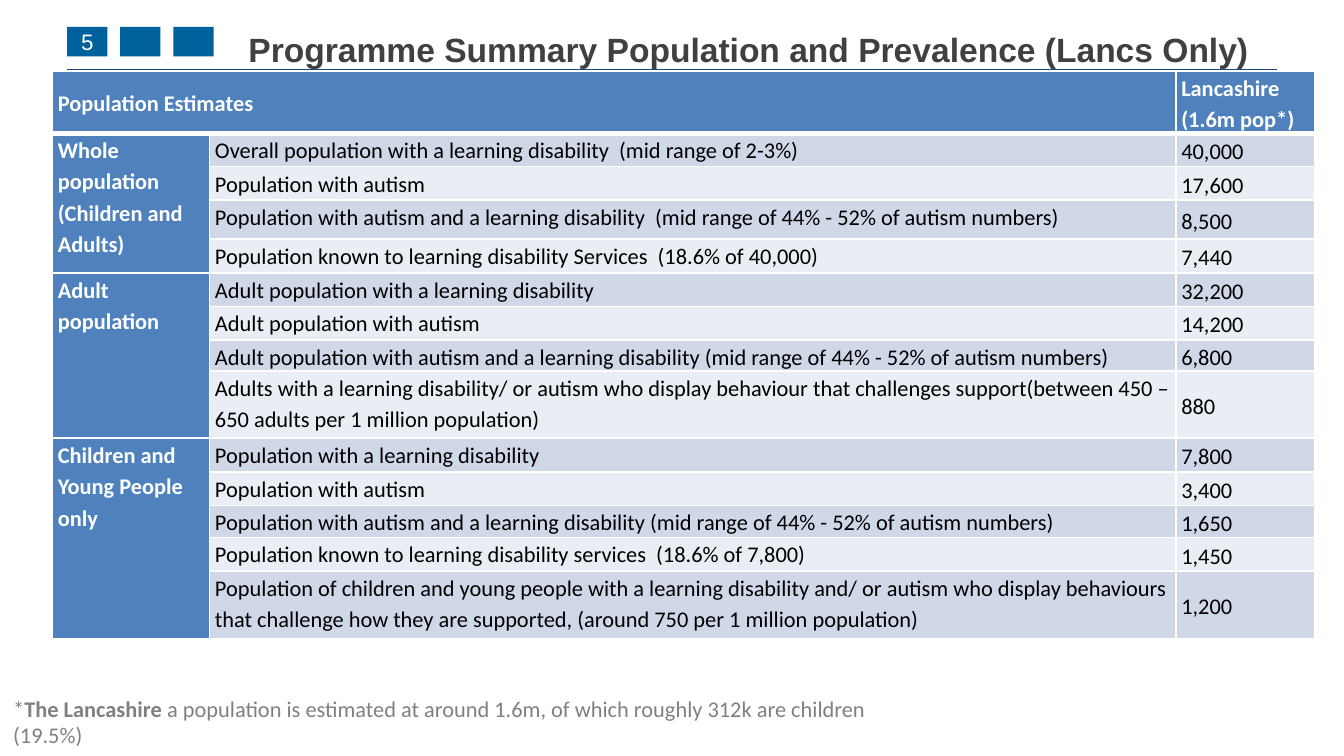
"""Build the population and prevalence summary slide."""
from dataclasses import dataclass

from lxml import etree
from pptx import Presentation
from pptx import util as u
from pptx.dml.color import RGBColor
from pptx.enum import shapes, text
from pptx.oxml import ns

UNIT = 0.1
COLS, ROWS = 100, 56.25
HUES = {
    "block": "00619D", "rule": "1F497D", "title": "404040", "note": "808080",
    "head": "4F81BD", "odd": "D0D8E8", "even": "E9EDF4",
    "white": "FFFFFF", "black": "000000",
}
WIDTHS = (11.7, 71.9, 10.3)
HEAD = 2.8
MIX = "(mid range of 44% - 52% of autism numbers)"


@dataclass
class Line:
    label: str
    count: str
    tall: float = 2.5


@dataclass
class Group:
    name: str
    lines: list[Line]


GROUPS = [
    Group("Whole population\n(Children and Adults)", [
        Line("Overall population with a learning disability  (mid range of 2-3%)", "40,000"),
        Line("Population with autism", "17,600"),
        Line(f"Population with autism and a learning disability  {MIX}", "8,500", 2.9),
        Line("Population known to learning disability Services  (18.6% of 40,000)", "7,440"),
    ]),
    Group("Adult population", [
        Line("Adult population with a learning disability", "32,200"),
        Line("Adult population with autism", "14,200"),
        Line(f"Adult population with autism and a learning disability {MIX}", "6,800", 1.5),
        Line("Adults with a learning disability/ or autism who display behaviour that "
             "challenges support(between 450 – 650 adults per 1 million population)", "880", 5),
    ]),
    Group("Children and Young People only", [
        Line("Population with a learning disability", "7,800"),
        Line("Population with autism", "3,400"),
        Line(f"Population with autism and a learning disability {MIX}", "1,650", 2.4),
        Line("Population known to learning disability services  (18.6% of 7,800)", "1,450"),
        Line("Population of children and young people with a learning disability and/ or "
             "autism who display behaviours that challenge how they are supported, "
             "(around 750 per 1 million population)", "1,200", 5),
    ]),
]


def grid(*spans: float) -> list[int]:
    return [u.Inches(span * UNIT) for span in spans]


def tint(name: str) -> RGBColor:
    return RGBColor.from_string(HUES[name])


def style(run, size: float, face: str, hue: str, bold: bool = False) -> None:
    font = run.font
    font.size, font.name, font.bold = u.Pt(size), face, bold
    font.color.rgb = tint(hue)


def add_block(slide, left: float, label: str = "") -> None:
    box = slide.shapes.add_shape(shapes.MSO_SHAPE.RECTANGLE, *grid(left, 2, 3, 2.2))
    box.shadow.inherit = False
    box.fill.solid()
    box.fill.fore_color.rgb = tint("block")
    box.line.fill.background()
    if label:
        frame = box.text_frame
        frame.margin_left = frame.margin_right = frame.margin_top = frame.margin_bottom = 0
        frame.vertical_anchor = text.MSO_ANCHOR.MIDDLE
        frame.text = label
        frame.paragraphs[0].alignment = text.PP_ALIGN.CENTER
        style(frame.paragraphs[0].runs[0], 12, "Arial", "white")


def add_rule(slide) -> None:
    rule = slide.shapes.add_connector(
        shapes.MSO_CONNECTOR.STRAIGHT, *grid(5, 5.2, COLS - 5, 5.2))
    rule.line.color.rgb = tint("rule")
    rule.line.width = u.Pt(1)
    etree.SubElement(rule._element.spPr, ns.qn("a:effectLst"))


def add_title(slide) -> None:
    frame = slide.shapes.add_textbox(*grid(17.5, 1.6, 76.7, 2.7)).text_frame
    frame.word_wrap = True
    frame.margin_top, frame.margin_bottom = grid(0.55, 0)
    frame.text = "Programme Summary Population and Prevalence (Lancs Only)"
    style(frame.paragraphs[0].runs[0], 18, "Arial", "title", True)


def add_note(slide) -> None:
    frame = slide.shapes.add_textbox(*grid(0, 51.2, 68.6, 5)).text_frame
    frame.word_wrap = True
    parts = (
        ("*", False), ("The Lancashire ", True),
        ("a population is estimated at around 1.6m, of which roughly 312k are "
         "children (19.5%)", False),
    )
    for words, bold in parts:
        run = frame.paragraphs[0].add_run()
        run.text = words
        style(run, 12, "Calibri", "note", bold)


def edge(cell, side: str, width: float) -> None:
    line = etree.SubElement(
        cell._tc.get_or_add_tcPr(), ns.qn(f"a:ln{side}"), w=str(u.Pt(width)))
    fill = etree.SubElement(line, ns.qn("a:solidFill"))
    etree.SubElement(fill, ns.qn("a:srgbClr"), val=HUES["white"])


def fill_cell(cell, words: str, hue: str, row: int, middle: bool) -> None:
    for side in "LRTB":
        thick = (row, side) in ((0, "B"), (1, "T"))
        edge(cell, side, 3 if thick else 1)
    cell.fill.solid()
    cell.fill.fore_color.rgb = tint(hue)
    cell.margin_left, cell.margin_right, cell.margin_top, cell.margin_bottom = grid(0.4, 0.4, 0, 0)
    cell.vertical_anchor = text.MSO_ANCHOR.MIDDLE if middle else text.MSO_ANCHOR.TOP
    cell.text_frame.text = words
    head = hue == "head"
    for para in cell.text_frame.paragraphs:
        para.line_spacing = 1.15
        para.font.size = u.Pt(12)
        for run in para.runs:
            style(run, 12, "Calibri", "white" if head else "black", head)


def add_table(slide) -> None:
    talls = [HEAD] + [line.tall for group in GROUPS for line in group.lines]
    frame = slide.shapes.add_table(
        len(talls), len(WIDTHS), *grid(3.9, 5.3, sum(WIDTHS), 41.7))
    table = frame.table
    table.first_row = table.horz_banding = False
    for col, width in zip(table.columns, grid(*WIDTHS)):
        col.width = width
    for row, tall in zip(table.rows, grid(*talls)):
        row.height = tall
    frame.height = grid(41.7)[0]

    for col, words in enumerate(("Population Estimates", "", "Lancashire\n(1.6m pop*)")):
        fill_cell(table.cell(0, col), words, "head", 0, True)
    table.cell(0, 0).merge(table.cell(0, 1))

    row = 1
    for group in GROUPS:
        first = row
        for step, line in enumerate(group.lines):
            hue = "even" if step % 2 else "odd"
            fill_cell(table.cell(row, 0), "" if step else group.name, "head", row, False)
            fill_cell(table.cell(row, 1), line.label, hue, row, False)
            fill_cell(table.cell(row, 2), line.count, hue, row, True)
            row += 1
        table.cell(first, 0).merge(table.cell(row - 1, 0))


def main() -> None:
    deck = Presentation()
    deck.slide_width, deck.slide_height = grid(COLS, ROWS)
    slide = deck.slides.add_slide(deck.slide_layouts[6])
    add_rule(slide)
    for step, label in enumerate(("5", "", "")):
        add_block(slide, 5 + 3.95 * step, label)
    add_title(slide)
    add_note(slide)
    add_table(slide)
    deck.save("out.pptx")


if __name__ == "__main__":
    main()
